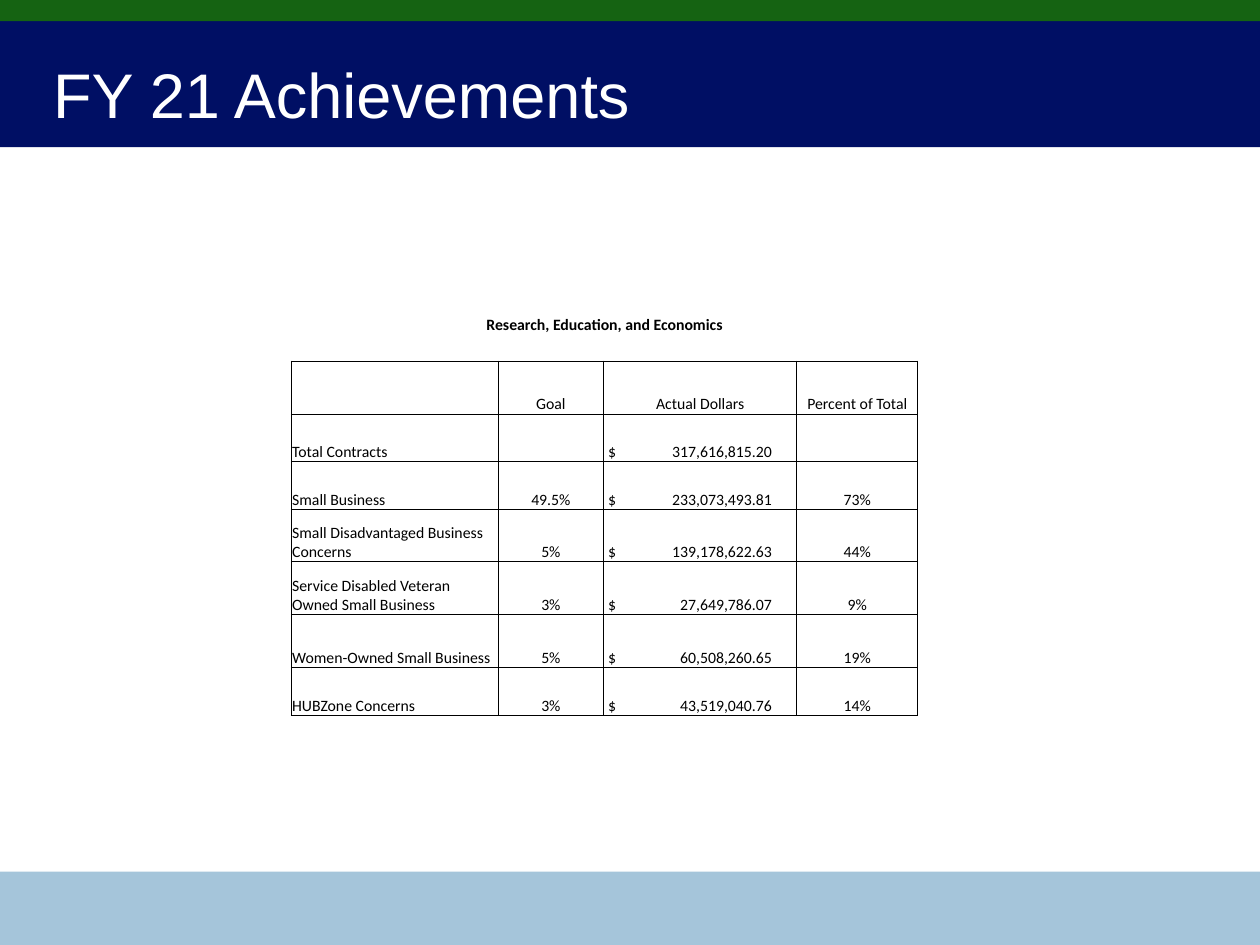
from dataclasses import dataclass

from lxml import etree
from pptx import Presentation
from pptx.dml.color import RGBColor
from pptx.enum.shapes import MSO_SHAPE
from pptx.enum.text import MSO_ANCHOR, MSO_AUTO_SIZE, PP_ALIGN
from pptx.oxml.ns import qn
from pptx.util import Cm, Pt

RECTANGLE = MSO_SHAPE.RECTANGLE
LEFT, CENTER = PP_ALIGN.LEFT, PP_ALIGN.CENTER
MIDDLE, BOTTOM = MSO_ANCHOR.MIDDLE, MSO_ANCHOR.BOTTOM
NO_AUTOSIZE = MSO_AUTO_SIZE.NONE
PLAIN_STYLE = "{2D5ABB26-0587-4C30-8999-92F81FD0307C}"
PAGE_WIDTH, PAGE_HEIGHT = 25.4, 19.05
COLUMN_WIDTHS = [1.6, 4.17, 2.13, 3.89, 2.44, 1.6]
BLANK_HEIGHT, CAPTION_ROW, HEADER_ROW = 0.53, 3, 5
INSET, DOLLAR_INSET, AMOUNT_TAB = 0.02, 0.09, 3.3


@dataclass
class Band:
    top: float
    height: float
    color: str


@dataclass
class Category:
    name: str
    goal: str
    dollars: str
    percent: str
    height: float


BANDS = [
    Band(0, 2.97, "000F64"),
    Band(17.57, 1.48, "A5C5DA"),
    Band(0, 0.43, "156312"),
]
HEADER = Category("", "Goal", "Actual Dollars", "Percent of Total", 1.07)
CATEGORIES = [
    Category("Total Contracts", "", "317,616,815.20", "", 0.95),
    Category("Small Business", "49.5%", "233,073,493.81", "73%", 0.97),
    Category("Small Disadvantaged Business Concerns", "5%", "139,178,622.63", "44%", 1.05),
    Category("Service Disabled Veteran Owned Small Business", "3%", "27,649,786.07", "9%", 1.07),
    Category("Women-Owned Small Business", "5%", "60,508,260.65", "19%", 1.07),
    Category("HUBZone Concerns", "3%", "43,519,040.76", "14%", 0.97),
]


def rgb(color: str) -> RGBColor:
    return RGBColor.from_string(color)


def set_font(paragraph, name: str, size: float, color: str, bold: bool = False) -> None:
    font = paragraph.font
    font.name, font.size, font.bold = name, Pt(size), bold
    font.color.rgb = rgb(color)


def draw_band(page, band: Band) -> None:
    shape = page.shapes.add_shape(
        RECTANGLE, 0, Cm(band.top), Cm(PAGE_WIDTH), Cm(band.height)
    )
    shape.shadow.inherit = False
    shape.fill.solid()
    shape.fill.fore_color.rgb = rgb(band.color)
    shape.line.fill.background()


def draw_title(page, text: str) -> None:
    title = page.shapes.title
    title.left, title.top, title.width, title.height = Cm(1.07), Cm(0.61), Cm(23.06), Cm(2.54)
    frame = title.text_frame
    frame.text = text
    frame.word_wrap = True
    frame.auto_size = NO_AUTOSIZE
    frame.vertical_anchor = MIDDLE
    frame.margin_left = frame.margin_right = 0
    paragraph = frame.paragraphs[0]
    paragraph.alignment = LEFT
    set_font(paragraph, "Arial", 36, "FFFFFF")
    page.shapes._spTree.append(title._element)


def outline(cell) -> None:
    properties = cell._tc.get_or_add_tcPr()
    for position, side in enumerate(("lnL", "lnR", "lnT", "lnB")):
        line = etree.Element(qn(f"a:{side}"), w=str(Pt(0.5)))
        fill = etree.SubElement(line, qn("a:solidFill"))
        etree.SubElement(fill, qn("a:srgbClr"), val="000000")
        properties.insert(position, line)


def add_right_tab(paragraph, position: float) -> None:
    tabs = etree.SubElement(paragraph._p.get_or_add_pPr(), qn("a:tabLst"))
    etree.SubElement(tabs, qn("a:tab"), pos=str(Cm(position)), algn="r")


def format_cell(cell, text: str = "", align=LEFT, bold: bool = False) -> None:
    cell.fill.background()
    cell.vertical_anchor = BOTTOM
    cell.margin_left = cell.margin_right = cell.margin_top = Cm(INSET)
    cell.margin_bottom = 0
    paragraph = cell.text_frame.paragraphs[0]
    paragraph.alignment = align
    if text:
        paragraph.text = text
    else:
        etree.SubElement(paragraph._p, qn("a:endParaRPr"), sz="900")
    if "\t" in text:
        cell.margin_left = Cm(DOLLAR_INSET)
        add_right_tab(paragraph, AMOUNT_TAB)
    set_font(paragraph, "Calibri", 9, "000000", bold)


def draw_table(page) -> None:
    records = [HEADER, *CATEGORIES]
    heights = [BLANK_HEIGHT] * HEADER_ROW + [record.height for record in records]
    frame = page.shapes.add_table(
        len(heights), len(COLUMN_WIDTHS),
        Cm(4.27), Cm(4.63), Cm(sum(COLUMN_WIDTHS)), Cm(sum(heights)),
    )
    table = frame.table
    table.first_row = table.horz_banding = False
    table._tbl.tblPr.find(qn("a:tableStyleId")).text = PLAIN_STYLE
    for column, width in zip(table.columns, COLUMN_WIDTHS):
        column.width = Cm(width)
    last = len(COLUMN_WIDTHS) - 1
    for index, height in enumerate(heights):
        table.rows[index].height = Cm(height)
        texts = [""] * len(COLUMN_WIDTHS)
        if index >= HEADER_ROW:
            record = records[index - HEADER_ROW]
            dollars = record.dollars if record is HEADER else f"$\t{record.dollars}"
            texts[1:last] = [record.name, record.goal, dollars, record.percent]
        elif index == CAPTION_ROW:
            texts[0] = "Research, Education, and Economics"
        for place, text in enumerate(texts):
            cell = table.cell(index, place)
            left = place == 1 or "\t" in text
            format_cell(cell, text, LEFT if left else CENTER, index == CAPTION_ROW)
            if index >= HEADER_ROW and 0 < place < last:
                outline(cell)
    table.cell(CAPTION_ROW, 0).merge(table.cell(CAPTION_ROW, last))


def main() -> None:
    deck = Presentation()
    deck.slide_width, deck.slide_height = Cm(PAGE_WIDTH), Cm(PAGE_HEIGHT)
    page = deck.slides.add_slide(deck.slide_layouts[5])
    for band in BANDS:
        draw_band(page, band)
    draw_title(page, "FY 21 Achievements")
    draw_table(page)
    deck.save("out.pptx")


if __name__ == "__main__":
    main()
